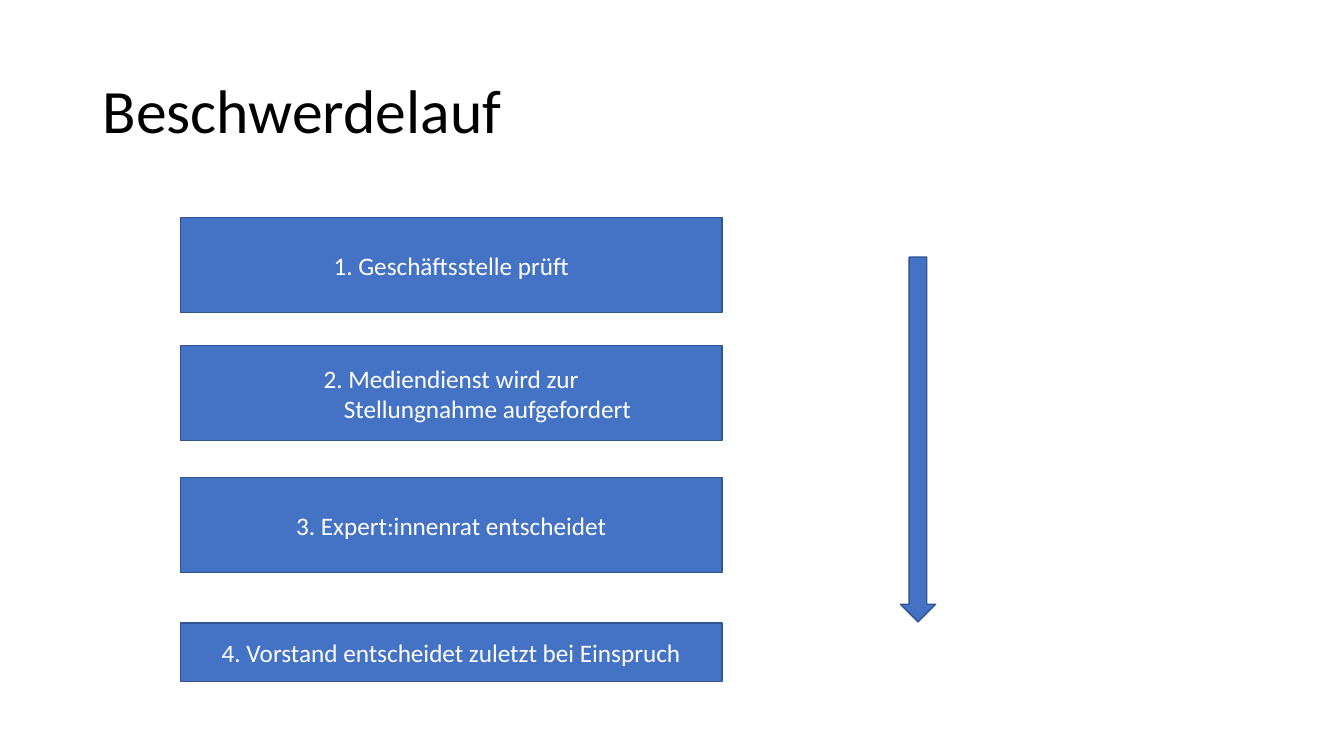
from pptx import Presentation
from pptx.dml.color import RGBColor
from pptx.enum.shapes import MSO_SHAPE
from pptx.enum.text import MSO_ANCHOR, PP_ALIGN
from pptx.util import Pt

RECTANGLE = MSO_SHAPE.RECTANGLE
DOWN_ARROW = MSO_SHAPE.DOWN_ARROW
MIDDLE = MSO_ANCHOR.MIDDLE
CENTER = PP_ALIGN.CENTER
LEFT = PP_ALIGN.LEFT

TITLE = "Beschwerdelauf"
STEPS = [
    {"top": 216, "height": 94, "lines": [("1. Geschäftsstelle prüft", 0)]},
    {"top": 343, "height": 94, "lines": [("2. Mediendienst wird zur", 0),
                                         ("Stellungnahme aufgefordert", 72)]},
    {"top": 474, "height": 94, "lines": [("3. Expert:innenrat entscheidet", 0)]},
    {"top": 618, "height": 58, "lines": [("4. Vorstand entscheidet zuletzt bei Einspruch", 0)]},
]

PAGE_SIZE = (1333, 750)
TITLE_AREA = (92, 40, 1150, 145)
STEP_LEFT, STEP_WIDTH = 179, 537
ARROW_AREA = (893, 255, 35, 362)
EMU_PER_PX = 9144

THEME = {
    "font": "Calibri",
    "title_size": 44,
    "step_size": 18,
    "title": RGBColor.from_string("000000"),
    "step_text": RGBColor.from_string("FFFFFF"),
    "fill": RGBColor.from_string("4472C4"),
    "line": RGBColor.from_string("325491"),
    "line_width": 1,
}


def px(*lengths):
    return [length * EMU_PER_PX for length in lengths]


def write(shape, lines, size, color, alignment):
    frame = shape.text_frame
    frame.word_wrap = True
    frame.vertical_anchor = MIDDLE
    frame.text = "\n".join(text for text, indent in lines)
    for paragraph, (text, indent) in zip(frame.paragraphs, lines):
        paragraph.alignment = alignment
        if indent:
            paragraph._p.get_or_add_pPr().set("marL", str(indent * EMU_PER_PX))
        for span in paragraph.runs:
            span.font.name = THEME["font"]
            span.font.size = Pt(size)
            span.font.color.rgb = color


def add_block(page, kind, area):
    block = page.shapes.add_shape(kind, *px(*area))
    block.shadow.inherit = False
    block.fill.solid()
    block.fill.fore_color.rgb = THEME["fill"]
    block.line.color.rgb = THEME["line"]
    block.line.width = Pt(THEME["line_width"])
    return block


def main():
    deck = Presentation()
    deck.slide_width, deck.slide_height = px(*PAGE_SIZE)
    page = deck.slides.add_slide(deck.slide_layouts[6])

    title = page.shapes.add_textbox(*px(*TITLE_AREA))
    write(title, [(TITLE, 0)], THEME["title_size"], THEME["title"], LEFT)
    title.text_frame.paragraphs[0].line_spacing = 0.9

    for step in STEPS:
        area = (STEP_LEFT, step["top"], STEP_WIDTH, step["height"])
        box = add_block(page, RECTANGLE, area)
        write(box, step["lines"], THEME["step_size"], THEME["step_text"], CENTER)

    add_block(page, DOWN_ARROW, ARROW_AREA)
    deck.save("out.pptx")


if __name__ == "__main__":
    main()
